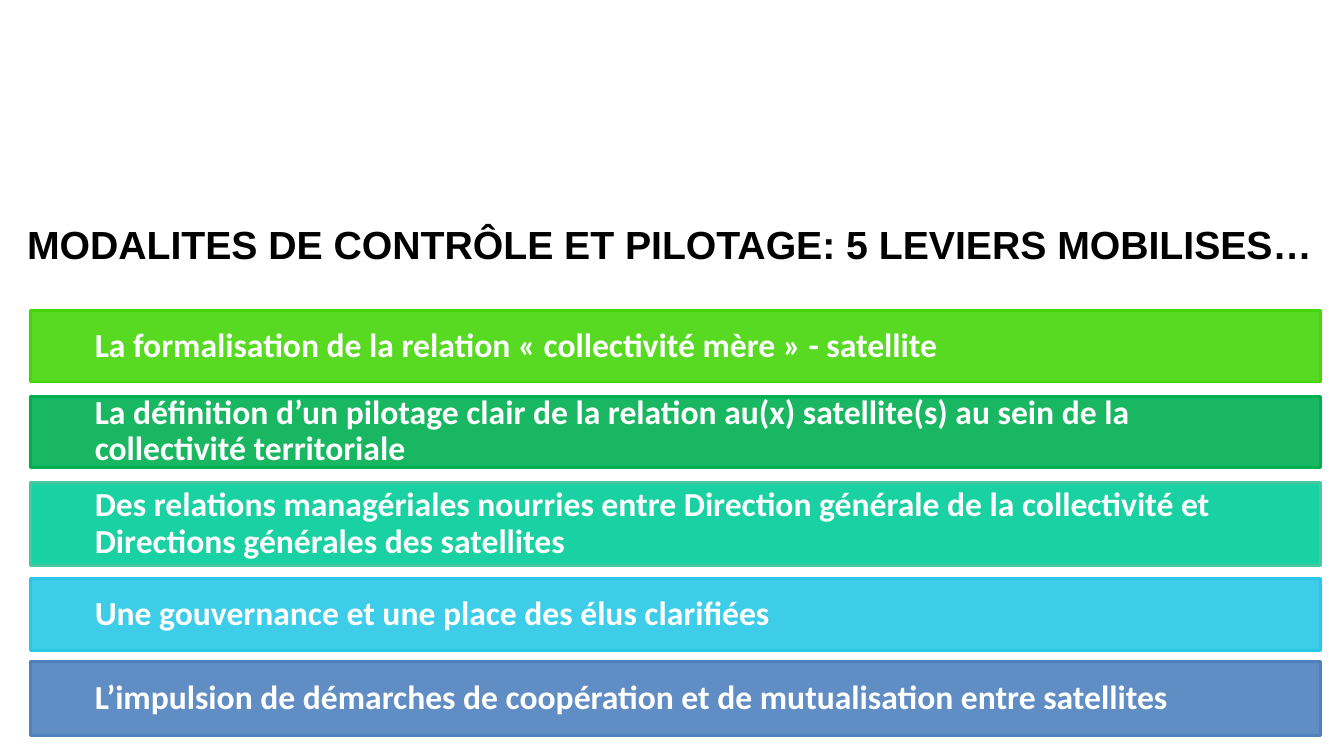
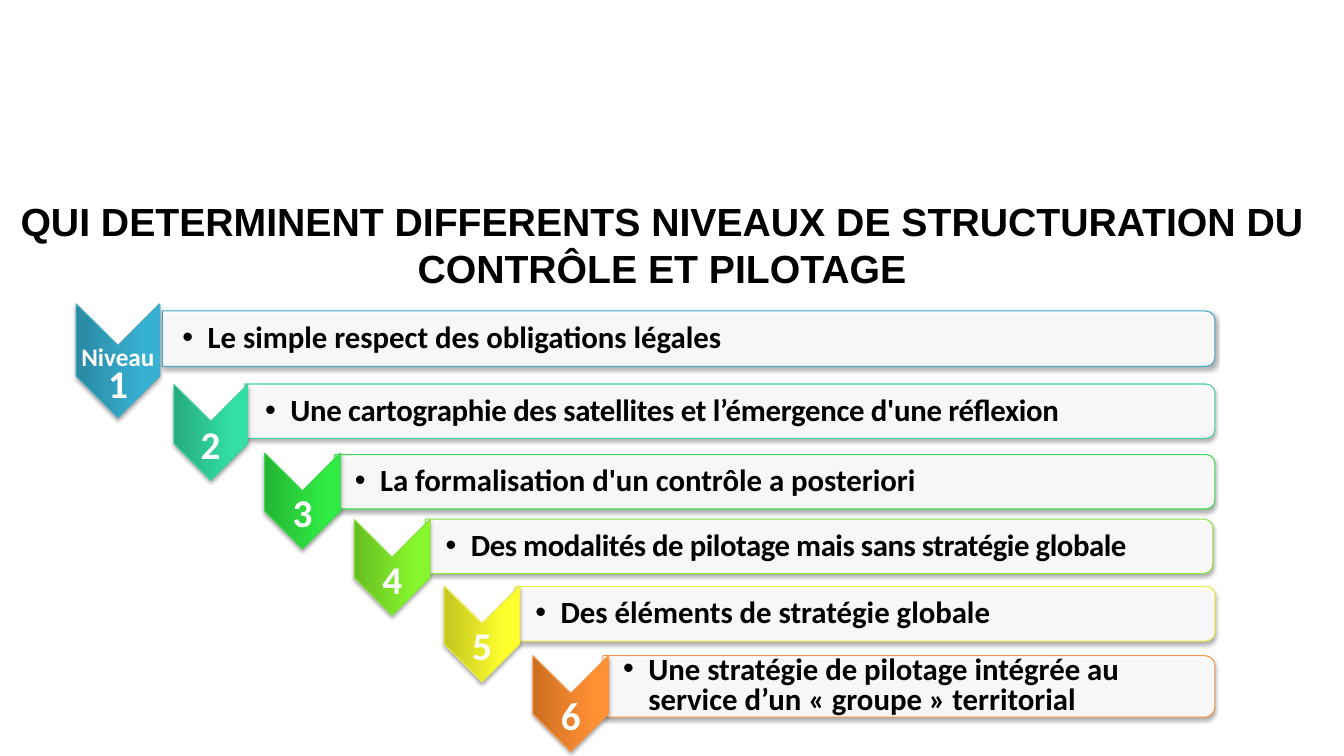
import pptx
import pptx.util
import pptx.dml.color
import pptx.enum.shapes
import pptx.enum.text
import pptx.oxml
import pptx.oxml.ns
import lxml.etree

Inches, Pt = pptx.util.Inches, pptx.util.Pt
RGB = pptx.dml.color.RGBColor.from_string
SHAPE = pptx.enum.shapes.MSO_SHAPE
MIDDLE = pptx.enum.text.MSO_ANCHOR.MIDDLE
CENTER = pptx.enum.text.PP_ALIGN.CENTER
LEFT = pptx.enum.text.PP_ALIGN.LEFT
qn = pptx.oxml.ns.qn

COLORS = {
    "text": "000000", "white": "FFFFFF",
    "lime": "46D60C", "green": "00B050", "mint": "00CC99", "mint line": "46C8A0",
    "cyan": "28C8E6", "blue": "4F81BD",
}
SHADOW = (
    '<a:outerShdw xmlns:a="http://schemas.openxmlformats.org/drawingml/2006/main" '
    'blurRad="39370" dist="22860" dir="5400000" rotWithShape="0">'
    '<a:srgbClr val="000000"><a:alpha val="35000"/></a:srgbClr></a:outerShdw>'
)


def write(p, text, size, color, font="Calibri"):
    """Add one bold run to a paragraph."""
    r = p.add_run()
    r.text = text
    r.font.name, r.font.size, r.font.bold = font, Pt(size), True
    r.font.color.rgb = RGB(COLORS[color])
    return r


def fill_translucent(sp, color):
    sp.fill.solid()
    sp.fill.fore_color.rgb = RGB(color)
    clr = sp._element.spPr.find(qn("a:solidFill")).find(qn("a:srgbClr"))
    lxml.etree.SubElement(clr, qn("a:alpha")).set("val", "90000")


prs = pptx.Presentation()
prs.slide_width, prs.slide_height = Inches(13.33), Inches(7.5)

# Titles
titles = [
    ("MODALITES DE CONTRÔLE ET PILOTAGE: 5 LEVIERS MOBILISES…", -0.33, 13.94),
    ("QUI DETERMINENT DIFFERENTS NIVEAUX DE STRUCTURATION DU CONTRÔLE ET PILOTAGE", 0, 13.13),
]
slides = []
for text, left, width in titles:
    s = prs.slides.add_slide(prs.slide_layouts[5])
    title = s.shapes.title
    title.left, title.top = Inches(left), Inches(1.95)
    title.width, title.height = Inches(width), Inches(0.94)
    tf = title.text_frame
    tf.auto_size = pptx.enum.text.MSO_AUTO_SIZE.NONE
    tf.vertical_anchor = MIDDLE
    tf.paragraphs[0].alignment = CENTER
    write(tf.paragraphs[0], text, 28, "text", "Arial")
    slides.append(s)
levers_slide, levels_slide = slides

# Slide 1: the five levers
levers = [
    ("La formalisation de la relation « collectivité mère » - satellite",
     3.08, 0.71, "lime", "lime"),
    ("La définition d’un pilotage clair de la relation au(x) satellite(s) au sein de la "
     "collectivité territoriale", 3.93, 0.71, "green", "green"),
    ("Des relations managériales nourries entre Direction générale de la collectivité et "
     "Directions générales des satellites", 4.79, 0.82, "mint", "mint line"),
    ("Une gouvernance et une place des élus clarifiées", 5.74, 0.71, "cyan", "cyan"),
    ("L’impulsion de démarches de coopération et de mutualisation entre satellites",
     6.56, 0.74, "blue", "blue"),
]
for text, top, height, fill, line in levers:
    sp = levers_slide.shapes.add_shape(
        SHAPE.RECTANGLE, Inches(0.3), Inches(top), Inches(12.8), Inches(height))
    sp.shadow.inherit = False
    fill_translucent(sp, COLORS[fill])
    sp.line.color.rgb = RGB(COLORS[line])
    sp.line.width = Pt(2)
    tf = sp.text_frame
    tf.word_wrap = True
    tf.vertical_anchor = MIDDLE
    tf.margin_left = tf.margin_right = Inches(0.64)
    tf.margin_top = tf.margin_bottom = 0
    p = tf.paragraphs[0]
    p.alignment, p.line_spacing = LEFT, 0.9
    write(p, text, 24, "white")

# Slide 2: the six levels. Bar: left, middle, width, height.
# Chevron: centre x, centre y, width, height. Colours: line, gradient start and end.
levels = [
    ("Le simple respect des obligations légales", 0, 0.9,
     (1.61, 3.36, 10.44, 0.55), (1.17, 3.58, 0.83, 1.13), ("46AAC5", "2A88A2", "37B1D2")),
    ("Une cartographie des satellites et l’émergence d'une réflexion", -20, 0.9,
     (2.43, 4.08, 9.62, 0.54), (2.09, 4.29, 0.73, 0.95), ("44D0A0", "27AB7E", "32DFA4")),
    ("La formalisation d'un contrôle a posteriori", 0, 0.9,
     (3.32, 4.78, 8.73, 0.54), (3, 4.97, 0.75, 0.95), ("42DA52", "24B534", "2FEB43")),
    ("Des modalités de pilotage mais sans stratégie globale", -30, 0.9,
     (4.22, 5.42, 7.81, 0.54), (3.89, 5.63, 0.75, 0.95), ("89E440", "67BD22", "86F62D")),
    ("Des éléments de stratégie globale", 0, 0.9,
     (5.11, 6.09, 6.94, 0.54), (4.78, 6.29, 0.75, 0.95), ("EDED40", "C4C521", "FEFF2C")),
    ("Une stratégie de pilotage intégrée au service d’un « groupe » territorial", 0, 0.8,
     (5.98, 6.81, 6.07, 0.61), (5.66, 6.98, 0.75, 0.95), ("F69240", "CC6E20", "FF9034")),
]
for number, (text, tracking, spacing, bar_box, chevron_box, colors) in enumerate(levels, 1):
    left, middle, width, height = bar_box
    cx, cy, across, down = chevron_box
    line, dark, bright = colors

    # Both outlines are turned a quarter, so their width runs down the slide
    bar = levels_slide.shapes.add_shape(
        SHAPE.ROUND_2_SAME_RECTANGLE, Inches(left + (width - height) / 2),
        Inches(middle - width / 2), Inches(height), Inches(width))
    fill_translucent(bar, COLORS["white"])
    chevron = levels_slide.shapes.add_shape(
        SHAPE.CHEVRON, Inches(cx - down / 2), Inches(cy - across / 2),
        Inches(down), Inches(across))
    chevron.fill.gradient()
    chevron.fill.gradient_angle = 90
    for stop, position, color in zip(chevron.fill.gradient_stops, (0, 0.8), (dark, bright)):
        stop.position = position
        stop.color.rgb = RGB(color)
    for sp in (bar, chevron):
        sp.rotation = 90
        sp.line.color.rgb = RGB(line)
        sp.line.width = Pt(0.75)
        sp.shadow.inherit = False
        sp._element.spPr.find(qn("a:effectLst")).append(pptx.oxml.parse_xml(SHADOW))

    tb = levels_slide.shapes.add_textbox(
        Inches(left), Inches(middle - height / 2), Inches(width - 0.03), Inches(height))
    tf = tb.text_frame
    tf.word_wrap = True
    tf.vertical_anchor = MIDDLE
    tf.margin_left = Inches(0.2)
    tf.margin_top = tf.margin_right = tf.margin_bottom = Inches(0.02)
    p = tf.paragraphs[0]
    p.line_spacing = spacing
    pPr = p._p.get_or_add_pPr()
    pPr.set("marL", str(Inches(0.25)))
    pPr.set("indent", str(-Inches(0.25)))
    lxml.etree.SubElement(pPr, qn("a:buFont")).set("typeface", "Arial")
    lxml.etree.SubElement(pPr, qn("a:buChar")).set("char", "•")
    r = write(p, text, 22, "text")
    if tracking:
        r.font._element.set("spc", str(tracking))

    # The label sits a little below the chevron's centre
    tb = levels_slide.shapes.add_textbox(
        Inches(cx - across / 2), Inches(cy + 0.14 - 0.35), Inches(across), Inches(0.7))
    tf = tb.text_frame
    tf.word_wrap = True
    tf.vertical_anchor = MIDDLE
    tf.margin_left = tf.margin_top = tf.margin_right = tf.margin_bottom = 0
    p = tf.paragraphs[0]
    p.alignment, p.line_spacing = CENTER, 0.9
    if number == 1:
        write(p, "Niveau", 18, "white")
        p = tf.add_paragraph()
        p.alignment, p.line_spacing = CENTER, 0.7
    write(p, str(number), 28, "white")

prs.save("out.pptx")
